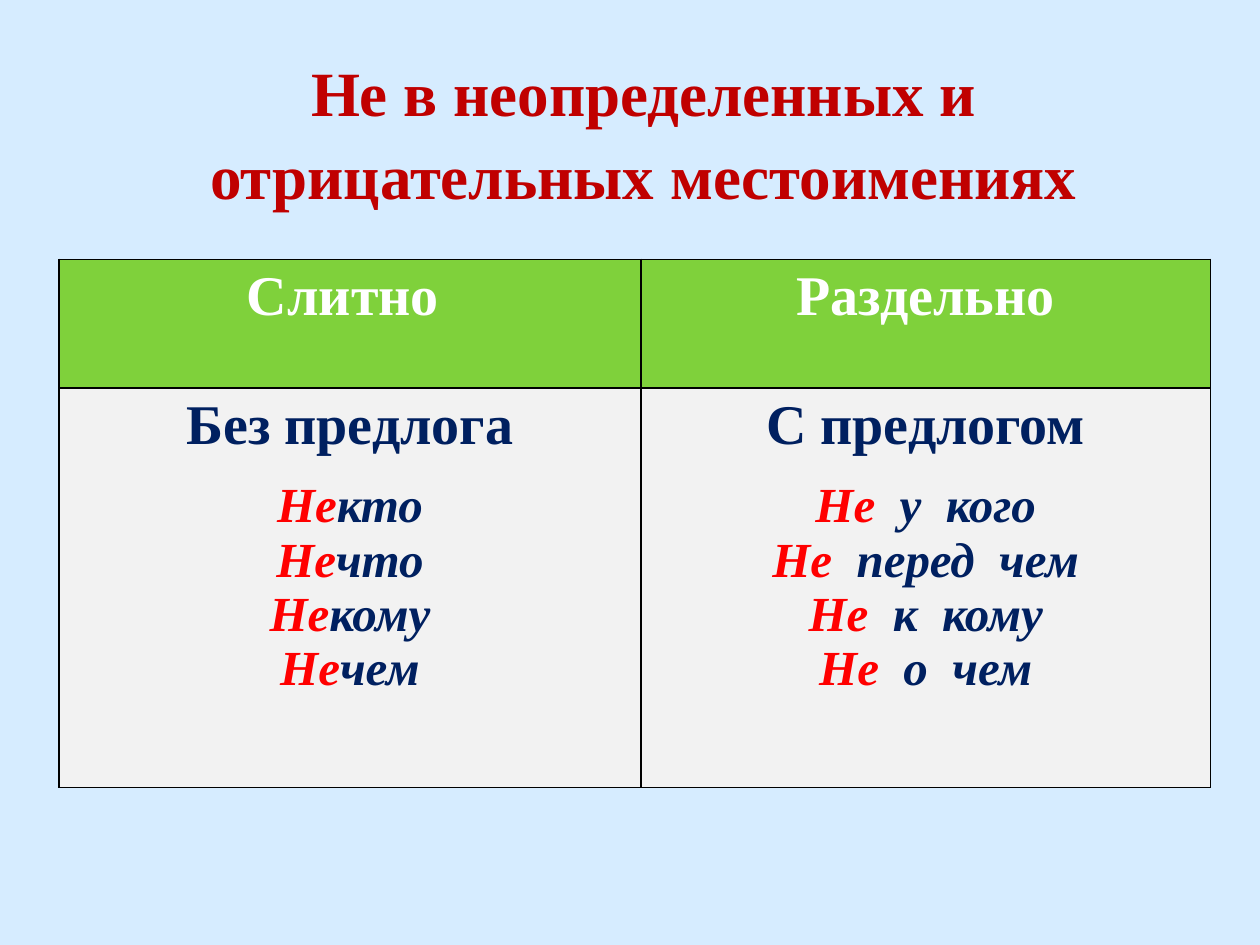
from dataclasses import dataclass

from lxml.etree import SubElement
from pptx import Presentation
from pptx.dml.color import RGBColor
from pptx.enum.text import MSO_ANCHOR, MSO_AUTO_SIZE, PP_ALIGN
from pptx.oxml.ns import qn
from pptx.util import Cm, Pt


@dataclass(frozen=True)
class Theme:
    font: str = "Times New Roman"
    background: str = "D6ECFF"
    title: str = "C00000"
    header_fill: str = "7FD13B"
    header_text: str = "FFFFFF"
    body_fill: str = "F2F2F2"
    text: str = "002060"
    accent: str = "FF0000"
    border: str = "000000"
    title_size: int = 36
    heading_size: int = 32
    example_size: int = 28


@dataclass(frozen=True)
class Column:
    header: str
    rule: str
    endings: tuple[str, ...]
    width: float


THEME = Theme()
PREFIX = "Не"
COLUMNS = (
    Column("Слитно ", "Без предлога", ("кто", "что", "кому", "чем"), 11.73),
    Column("Раздельно", "С предлогом",
           ("  у  кого", "  перед  чем", "  к  кому", "  о  чем"), 11.48),
)
ROW_HEIGHTS = (2.59, 8.05)


def format_run(r, size: int, color: str, italic: bool = False) -> None:
    r.font.name = THEME.font
    r.font.size = Pt(size)
    r.font.bold = True
    r.font.italic = italic
    r.font.color.rgb = RGBColor.from_string(color)


def write_line(p, text: str, size: int, color: str) -> None:
    p.text = text
    p.alignment = PP_ALIGN.CENTER
    format_run(p.runs[0], size, color)


def add_example(tf, ending: str):
    p = tf.add_paragraph()
    p.alignment = PP_ALIGN.CENTER
    for text, color in ((PREFIX, THEME.accent), (ending, THEME.text)):
        r = p.add_run()
        r.text = text
        format_run(r, THEME.example_size, color, italic=True)
    return p


def style_cell(cell, fill: str) -> None:
    # Borders go before the fill in the cell properties
    tc_pr = cell._tc.get_or_add_tcPr()
    for side in ("lnL", "lnR", "lnT", "lnB"):
        ln = SubElement(tc_pr, qn(f"a:{side}"), w=str(Pt(1)))
        SubElement(SubElement(ln, qn("a:solidFill")), qn("a:srgbClr"), val=THEME.border)
    cell.fill.solid()
    cell.fill.fore_color.rgb = RGBColor.from_string(fill)


def add_title(s, text: str) -> None:
    sp = s.shapes.title
    sp.left, sp.top, sp.width, sp.height = Cm(2.18), Cm(2.39), Cm(21.59), Cm(2.18)
    tf = sp.text_frame
    tf.word_wrap = True
    tf.auto_size = MSO_AUTO_SIZE.NONE
    tf.vertical_anchor = MSO_ANCHOR.BOTTOM
    tf.margin_bottom = Cm(0.3)
    write_line(tf.paragraphs[0], text, THEME.title_size, THEME.title)
    tf.paragraphs[0].line_spacing = 1.1


def add_rules_table(s, columns: tuple[Column, ...]) -> None:
    table = s.shapes.add_table(
        len(ROW_HEIGHTS), len(columns), Cm(1.19), Cm(5.23),
        Cm(sum(c.width for c in columns)), Cm(sum(ROW_HEIGHTS))).table
    for row, height in zip(table.rows, ROW_HEIGHTS):
        row.height = Cm(height)
    for i, column in enumerate(columns):
        table.columns[i].width = Cm(column.width)
        header, body = table.cell(0, i), table.cell(1, i)
        style_cell(header, THEME.header_fill)
        style_cell(body, THEME.body_fill)
        write_line(header.text_frame.paragraphs[0], column.header,
                   THEME.heading_size, THEME.header_text)
        tf = body.text_frame
        write_line(tf.paragraphs[0], column.rule, THEME.heading_size, THEME.text)
        examples = [add_example(tf, ending) for ending in column.endings]
        examples[0].space_before = Pt(13)


def main() -> None:
    prs = Presentation()
    prs.slide_width, prs.slide_height = Cm(25.4), Cm(19.05)
    s = prs.slides.add_slide(prs.slide_layouts[5])

    # Background
    s.background.fill.solid()
    s.background.fill.fore_color.rgb = RGBColor.from_string(THEME.background)

    # Content
    add_title(s, "Не в неопределенных и отрицательных местоимениях")
    add_rules_table(s, COLUMNS)
    prs.save("out.pptx")


if __name__ == "__main__":
    main()
